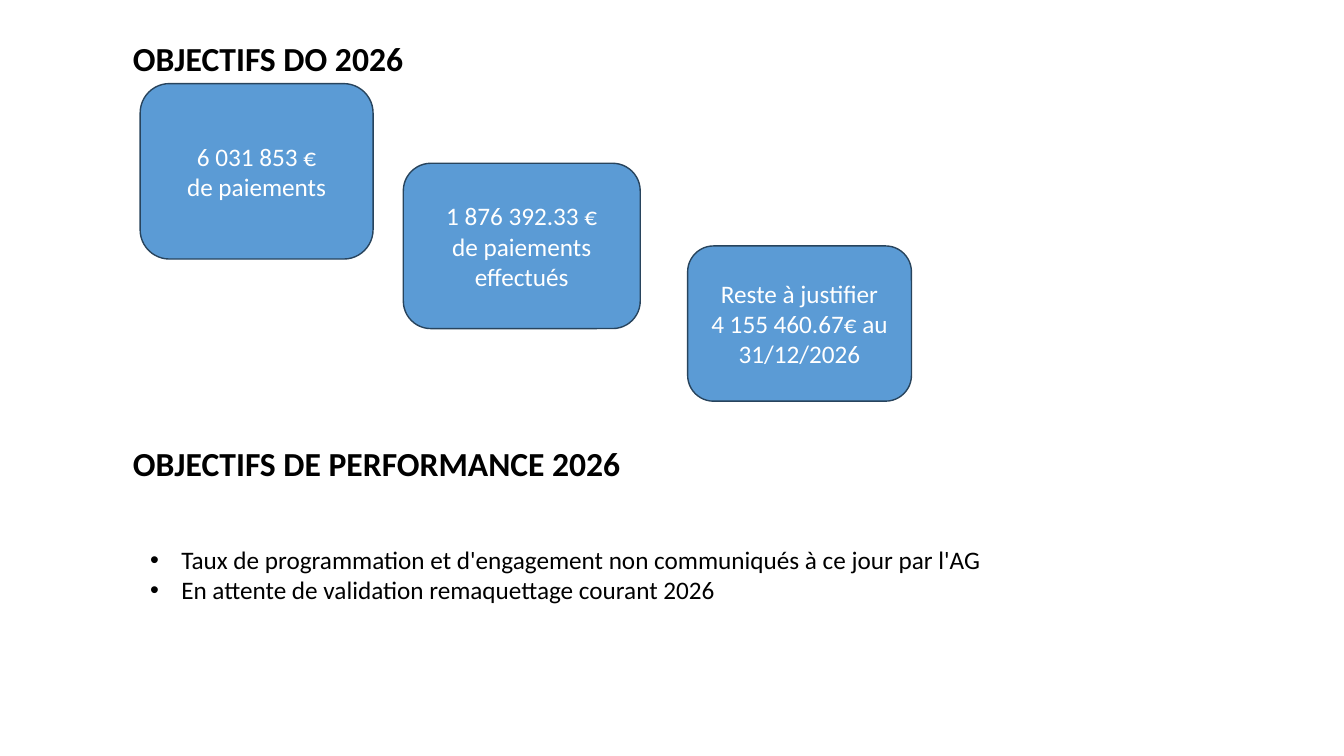
"""Build the slide of 2026 payment and performance objectives."""
from dataclasses import dataclass

from lxml import etree
from pptx import Presentation
from pptx.dml.color import RGBColor
from pptx.enum.shapes import MSO_SHAPE
from pptx.enum.text import MSO_ANCHOR, MSO_AUTO_SIZE, PP_ALIGN
from pptx.oxml.ns import qn
from pptx.slide import Slide
from pptx.text.text import TextFrame, _Paragraph
from pptx.util import Inches, Pt

ROUNDED = MSO_SHAPE.ROUNDED_RECTANGLE
MIDDLE = MSO_ANCHOR.MIDDLE
FIT_SHAPE = MSO_AUTO_SIZE.SHAPE_TO_FIT_TEXT
CENTER = PP_ALIGN.CENTER
LEFT = PP_ALIGN.LEFT

WHITE = RGBColor(0xFF, 0xFF, 0xFF)
BLACK = RGBColor(0x00, 0x00, 0x00)
BLUE = RGBColor(0x5B, 0x9B, 0xD5)
NAVY = RGBColor(0x28, 0x44, 0x5D)

BODY_FORMAT = {"name": "Calibri", "size": Pt(18), "bold": False}
HEADING_FORMAT = {"name": "Calibri", "size": Pt(24), "bold": True}
BULLET_INDENT = Inches(0.31)


@dataclass(frozen=True)
class Area:
    left: float
    top: float
    width: float
    height: float

    def lengths(self) -> list[int]:
        return [Inches(n) for n in (self.left, self.top, self.width, self.height)]


@dataclass(frozen=True)
class Amount:
    area: Area
    lines: tuple[str, ...]


@dataclass(frozen=True)
class Passage:
    area: Area
    lines: tuple[str, ...]
    font_format: dict
    bulleted: bool = False


AMOUNTS = (
    Amount(Area(1.39, 0.83, 2.31, 1.74), ("6 031 853 €", "de paiements")),
    Amount(Area(4, 1.62, 2.35, 1.64), ("1 876 392.33 €", "de paiements effectués")),
    Amount(Area(6.82, 2.44, 2.22, 1.54),
           ("Reste à justifier", "4 155 460.67€ au 31/12/2026")),
)

PASSAGES = (
    Passage(Area(1.22, 0.33, 7.33, 0.5), ("OBJECTIFS DO 2026",), HEADING_FORMAT),
    Passage(Area(1.22, 4.34, 7.33, 0.5), ("OBJECTIFS DE PERFORMANCE 2026",),
            HEADING_FORMAT),
    Passage(
        Area(1.39, 5.35, 10.36, 0.71),
        ("Taux de programmation et d'engagement non communiqués à ce jour par l'AG",
         "En attente de validation remaquettage courant 2026"),
        BODY_FORMAT,
        bulleted=True,
    ),
)


def add_bullet(paragraph: _Paragraph) -> None:
    properties = paragraph._p.get_or_add_pPr()
    properties.set("marL", str(BULLET_INDENT))
    properties.set("indent", str(-BULLET_INDENT))
    etree.SubElement(properties, qn("a:buFont")).set("typeface", "Arial")
    etree.SubElement(properties, qn("a:buChar")).set("char", "•")


def write_lines(frame: TextFrame, lines: tuple[str, ...], font_format: dict,
                color: RGBColor, alignment: PP_ALIGN, bulleted: bool = False) -> None:
    frame.word_wrap = True
    for index, line in enumerate(lines):
        paragraph = frame.add_paragraph() if index else frame.paragraphs[0]
        paragraph.alignment = alignment
        if bulleted:
            add_bullet(paragraph)
        run = paragraph.add_run()
        run.text = line
        for attribute, value in font_format.items():
            setattr(run.font, attribute, value)
        run.font.color.rgb = color


def draw_amount(slide: Slide, amount: Amount) -> None:
    card = slide.shapes.add_shape(ROUNDED, *amount.area.lengths())
    card.shadow.inherit = False
    card.fill.solid()
    card.fill.fore_color.rgb = BLUE
    card.line.color.rgb = NAVY
    card.line.width = Pt(1)
    card.text_frame.vertical_anchor = MIDDLE
    write_lines(card.text_frame, amount.lines, BODY_FORMAT, WHITE, CENTER)


def draw_passage(slide: Slide, passage: Passage) -> None:
    frame = slide.shapes.add_textbox(*passage.area.lengths()).text_frame
    frame.auto_size = FIT_SHAPE
    write_lines(frame, passage.lines, passage.font_format, BLACK, LEFT,
                passage.bulleted)


def main() -> None:
    presentation = Presentation()
    presentation.slide_width = Inches(13.33)
    presentation.slide_height = Inches(7.5)
    slide = presentation.slides.add_slide(presentation.slide_layouts[6])
    for amount in AMOUNTS:
        draw_amount(slide, amount)
    for passage in PASSAGES:
        draw_passage(slide, passage)
    presentation.save("out.pptx")


if __name__ == "__main__":
    main()
